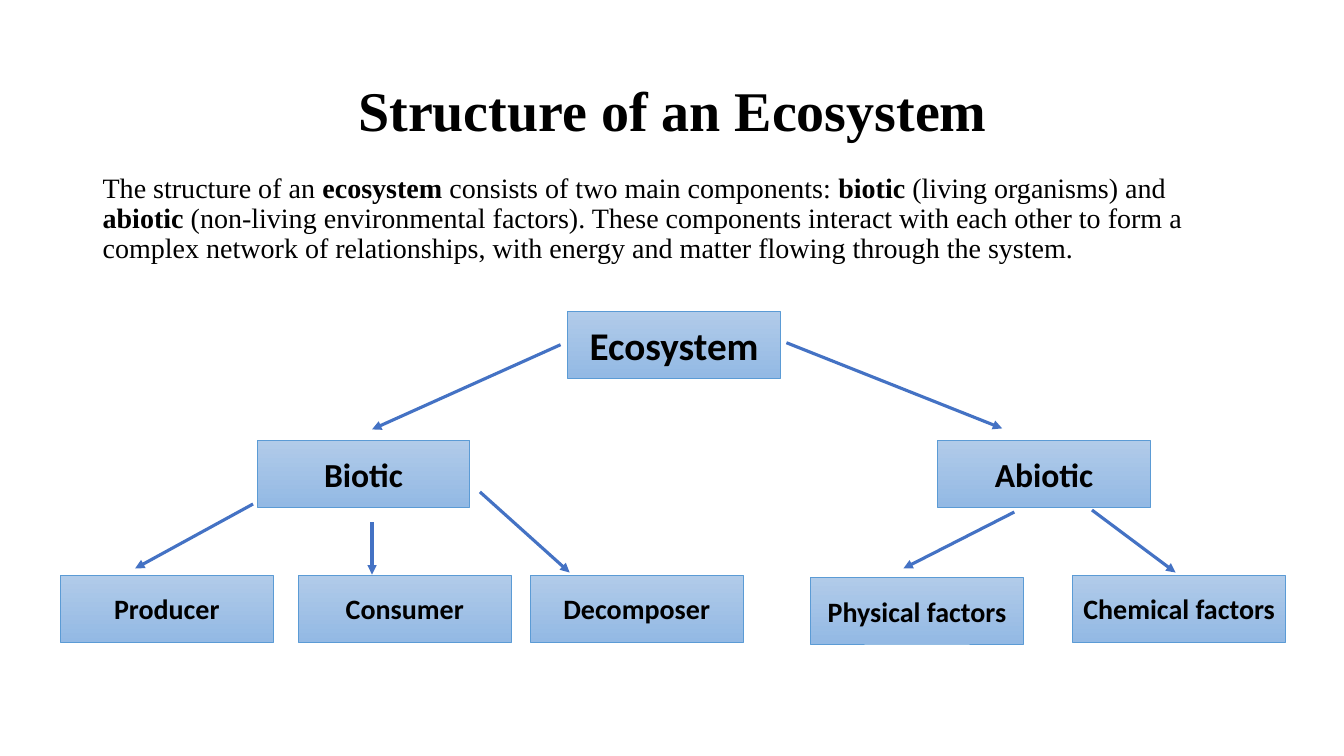
"""Build the slide on the structure of an ecosystem."""
from lxml.etree import SubElement
from pptx import Presentation
from pptx.dml.color import RGBColor
from pptx.enum.shapes import MSO_CONNECTOR as CONNECTOR, MSO_SHAPE as SHAPE
from pptx.enum.text import MSO_ANCHOR as ANCHOR, PP_ALIGN as ALIGN
from pptx.oxml.ns import qn
from pptx.util import Inches, Pt

BLACK = RGBColor(0x00, 0x00, 0x00)
BOX_TOP = RGBColor(0xB1, 0xCB, 0xE9)
BOX_BOTTOM = RGBColor(0x93, 0xB9, 0xE4)
BOX_EDGE = RGBColor(0x5B, 0x9B, 0xD5)
ARROW = RGBColor(0x44, 0x72, 0xC4)

SERIF, SANS = "Times New Roman", "Calibri"
BOX_WIDTH, BOX_HEIGHT = 2.11, 0.66

INTRO = [
    ("The structure of an ", False),
    ("ecosystem", True),
    (" consists of two main components: ", False),
    ("biotic", True),
    (" (living organisms) and ", False),
    ("abiotic", True),
    (" (non-living environmental factors). These components interact with each "
     "other to form a complex network of relationships, with energy and matter "
     "flowing through the system.", False),
]

COMPONENTS = [
    ("Ecosystem", 5.63, 3.09, 28),
    ("Biotic", 2.55, 4.37, 24),
    ("Abiotic", 9.3, 4.37, 24),
    ("Producer", 0.6, 5.71, 20),
    ("Consumer", 2.96, 5.71, 20),
    ("Decomposer", 5.26, 5.71, 20),
    ("Physical factors", 8.04, 5.73, 20),
    ("Chemical factors", 10.64, 5.71, 20),
]

BRANCHES = [
    (5.56, 3.42, 3.69, 4.26),
    (7.8, 3.4, 9.94, 4.25),
    (2.51, 5, 1.34, 5.64),
    (3.69, 5.18, 3.69, 5.7),
    (4.76, 4.88, 5.65, 5.68),
    (10.06, 5.08, 8.96, 5.64),
    (10.83, 5.06, 11.66, 5.68),
]


def style_run(run, font_name, size, bold):
    """Set the font, size and weight of a run in black."""
    run.font.name = font_name
    run.font.size = Pt(size)
    run.font.bold = bold
    run.font.color.rgb = BLACK


def add_passage(slide, top, height, pieces, size, align, anchor):
    """Add a full-width serif paragraph made of plain and bold pieces."""
    passage = slide.shapes.add_textbox(
        Inches(0.92), Inches(top), Inches(11.5), Inches(height))
    frame = passage.text_frame
    frame.word_wrap = True
    frame.vertical_anchor = anchor
    paragraph = frame.paragraphs[0]
    paragraph.alignment = align
    paragraph.line_spacing = 0.9
    for words, bold in pieces:
        run = paragraph.add_run()
        run.text = words
        style_run(run, SERIF, size, bold)
    return paragraph


def add_component(slide, label, left, top, size):
    """Add a labelled box with a vertical gradient."""
    component = slide.shapes.add_shape(
        SHAPE.RECTANGLE, Inches(left), Inches(top),
        Inches(BOX_WIDTH), Inches(BOX_HEIGHT))
    component.shadow.inherit = False
    component.fill.gradient()
    component.fill.gradient_angle = 270
    for stop, color in zip(component.fill.gradient_stops, (BOX_TOP, BOX_BOTTOM)):
        stop.color.rgb = color
    component.line.color.rgb = BOX_EDGE
    component.line.width = Pt(0.5)
    frame = component.text_frame
    frame.margin_left = frame.margin_right = Inches(0.05)
    frame.word_wrap = True
    frame.vertical_anchor = ANCHOR.MIDDLE
    frame.text = label
    paragraph = frame.paragraphs[0]
    paragraph.alignment = ALIGN.CENTER
    style_run(paragraph.runs[0], SANS, size, True)


def add_branch(slide, *ends):
    """Add an arrow from a component to one of its parts."""
    branch = slide.shapes.add_connector(
        CONNECTOR.STRAIGHT, *(Inches(value) for value in ends))
    branch.line.color.rgb = ARROW
    branch.line.width = Pt(2.25)
    SubElement(branch.line._get_or_add_ln(), qn("a:tailEnd"), type="triangle")
    SubElement(branch._element.spPr, qn("a:effectLst"))


def main():
    """Create the slide and save it."""
    deck = Presentation()
    deck.slide_width, deck.slide_height = Inches(13.33), Inches(7.5)
    slide = deck.slides.add_slide(deck.slide_layouts[6])
    add_passage(slide, 0.4, 1.45, [("Structure of an Ecosystem", True)],
                40, ALIGN.CENTER, ANCHOR.MIDDLE)
    intro = add_passage(slide, 1.68, 5.08, INTRO, 20, ALIGN.LEFT, ANCHOR.TOP)
    intro.space_before = Pt(10)
    for component in COMPONENTS:
        add_component(slide, *component)
    for branch in BRANCHES:
        add_branch(slide, *branch)
    deck.save("out.pptx")


if __name__ == "__main__":
    main()
